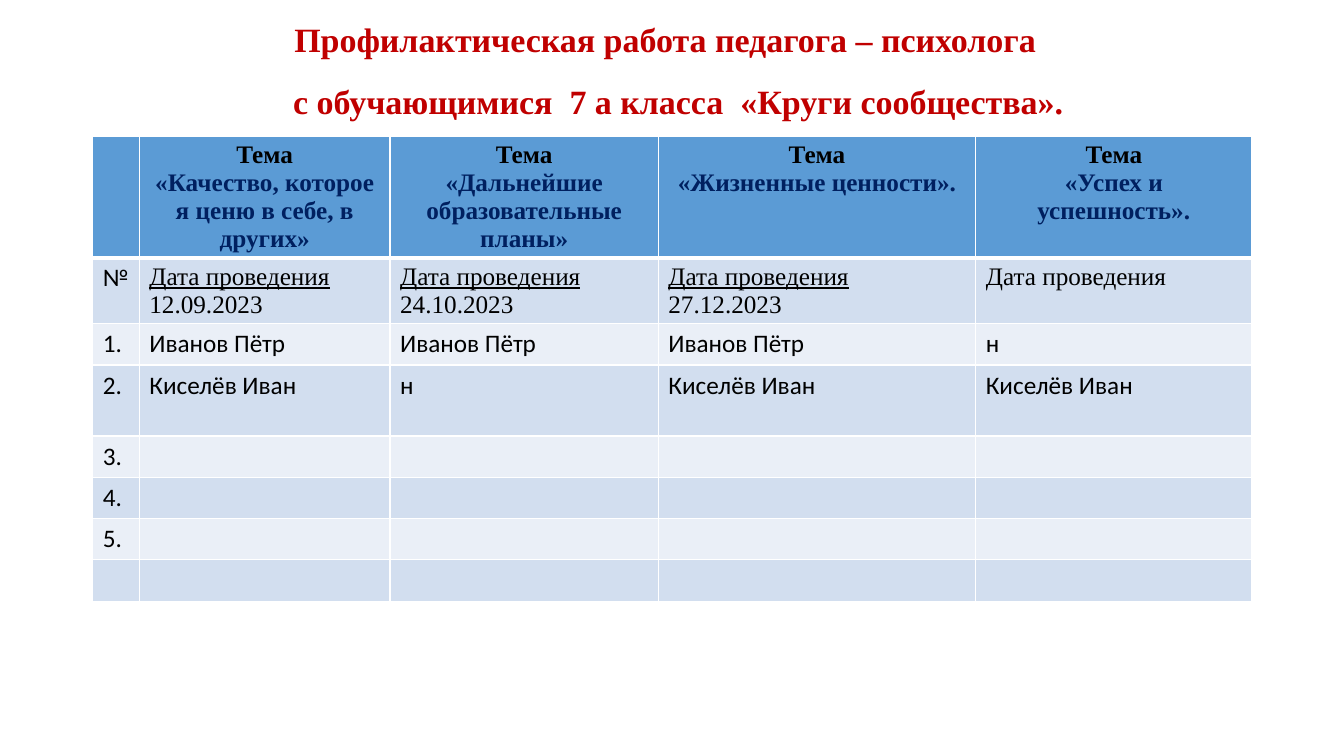
from dataclasses import dataclass

from lxml import etree
from pptx import Presentation
from pptx.dml.color import RGBColor
from pptx.enum.text import MSO_ANCHOR, MSO_AUTO_SIZE, PP_ALIGN
from pptx.oxml.ns import qn
from pptx.util import Cm, Pt

CENTER, LEFT = PP_ALIGN.CENTER, PP_ALIGN.LEFT
TOP, FIXED = MSO_ANCHOR.TOP, MSO_AUTO_SIZE.NONE
SERIF, SANS = "Times New Roman", "Calibri"
BLACK, NAVY, RED, WHITE = "000000", "002060", "C00000", "FFFFFF"
BLUE, DARK, PALE = "5B9BD5", "D2DEEF", "EAEFF7"


@dataclass
class Look:
    font: str = SANS
    size: float = 18
    color: str = BLACK
    bold: bool = False
    line: bool = False
    align: PP_ALIGN = LEFT


@dataclass
class Row:
    height: float
    texts: list[str]
    first: Look
    rest: Look


PLAIN = Look()
DATE = Look(SERIF)
DUE = Look(SERIF, line=True)
TOPIC = Look(SERIF, bold=True, align=CENTER)
THEME = Look(SERIF, color=NAVY, bold=True, align=CENTER)
HEAD = Look(SERIF, 24.3, RED, True, align=CENTER)

TITLE = (
    "Профилактическая работа педагога – психолога\n"
    "с обучающимися  7 а класса  «Круги сообщества»."
)
WIDTHS = [1.17, 6.32, 6.76, 8, 6.96]
LOW = 1.04
IVAN, KIS = "Иванов Пётр", "Киселёв Иван"
DAY = "Дата проведения"
ROWS = [
    Row(3.06, ["", "Тема\n«Качество, которое я ценю в себе, в других»",
               "Тема\n«Дальнейшие образовательные планы»",
               "Тема\n«Жизненные ценности».",
               "Тема\n«Успех и успешность»."], TOPIC, THEME),
    Row(1.66, ["№", f"{DAY}\n12.09.2023", f"{DAY}\n24.10.2023",
               f"{DAY}\n27.12.2023", DAY], DUE, DATE),
    Row(LOW, ["1.", IVAN, IVAN, IVAN, "н"], PLAIN, PLAIN),
    Row(1.79, ["2.", KIS, "н", KIS, KIS], PLAIN, PLAIN),
    *[Row(LOW, [mark, "", "", "", ""], PLAIN, PLAIN)
      for mark in ("3.", "4.", "5.", "")],
]


def rgb(code: str) -> RGBColor:
    return RGBColor.from_string(code)


def style(para, look: Look) -> None:
    para.alignment = look.align
    for run in para.runs:
        font = run.font
        font.name, font.size = look.font, Pt(look.size)
        font.bold, font.underline = look.bold, look.line
        font.color.rgb = rgb(look.color)


def edge(cell, top: float, base: float) -> None:
    """Draw white borders; this must come before the cell's fill."""
    props = cell._tc.get_or_add_tcPr()
    for side, width in (("L", 1), ("R", 1), ("T", top), ("B", base)):
        line = etree.SubElement(props, qn(f"a:ln{side}"), w=str(Pt(width)))
        fill = etree.SubElement(line, qn("a:solidFill"))
        etree.SubElement(fill, qn("a:srgbClr"), val=WHITE)


def add_title(slide) -> None:
    title = slide.shapes.title
    title.left, title.top = Cm(2.16), Cm(0.58)
    title.width, title.height = Cm(29.21), Cm(2.72)
    frame = title.text_frame
    frame.text = TITLE
    frame.word_wrap, frame.auto_size = True, FIXED
    frame.vertical_anchor = TOP
    frame.margin_top = frame.margin_bottom = 0
    for para in frame.paragraphs:
        style(para, HEAD)
        para.line_spacing = 0.9
    last = frame.paragraphs[-1]
    last.space_before = Pt(17.8)
    last._p.get_or_add_pPr().set("marL", str(Cm(0.66)))


def add_grid(slide) -> None:
    grid = slide.shapes.add_table(
        len(ROWS), len(WIDTHS), Cm(2.34), Cm(3.43),
        Cm(sum(WIDTHS)), Cm(sum(row.height for row in ROWS))).table
    grid.first_row = grid.horz_banding = False
    for col, width in zip(grid.columns, WIDTHS):
        col.width = Cm(width)
    for i, row in enumerate(ROWS):
        grid.rows[i].height = Cm(row.height)
        tone = BLUE if i == 0 else DARK if i % 2 else PALE
        for j, text in enumerate(row.texts):
            cell = grid.cell(i, j)
            edge(cell, 3 if i == 1 else 1, 3 if i == 0 else 1)
            cell.fill.solid()
            cell.fill.fore_color.rgb = rgb(tone)
            cell.text_frame.text = text
            head, *tail = cell.text_frame.paragraphs
            first = row.first
            if first is DUE and not tail:
                first = DATE if j else PLAIN
            style(head, first)
            for para in tail:
                style(para, row.rest)


def main() -> None:
    deck = Presentation()
    deck.slide_width, deck.slide_height = Cm(33.87), Cm(19.05)
    slide = deck.slides.add_slide(deck.slide_layouts[5])
    add_title(slide)
    add_grid(slide)
    deck.save("out.pptx")


if __name__ == "__main__":
    main()
